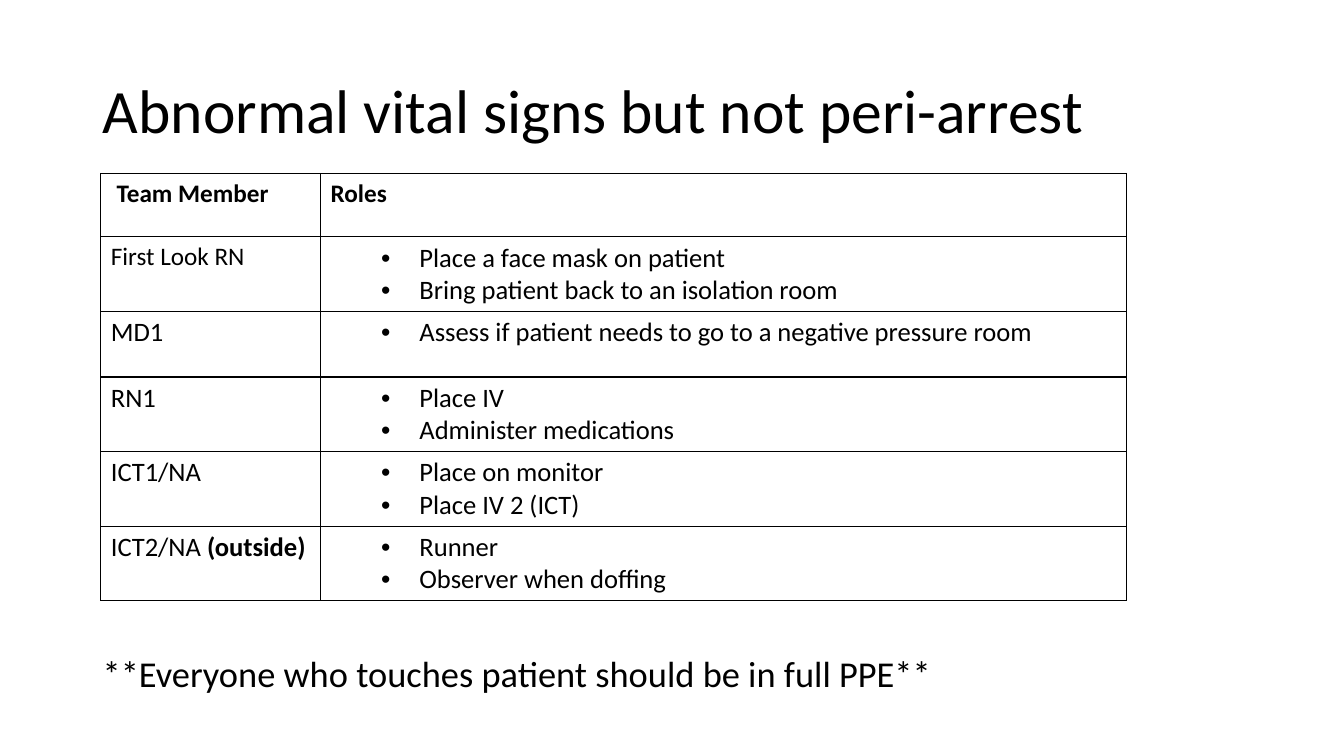
"""Build the slide of team roles for abnormal vital signs."""
from lxml.etree import SubElement
from pptx import Presentation
from pptx.dml.color import RGBColor
from pptx.enum.text import MSO_ANCHOR as Anchor
from pptx.oxml.ns import qn
from pptx.util import Inches, Pt

TITLE = "Abnormal vital signs but not peri-arrest"
HEADER = (" Team Member", "Roles")
ROLES = [
    ("First Look RN", "", ["Place a face mask on patient", "Bring patient back to an isolation room"]),
    ("MD1", "", ["Assess if patient needs to go to a negative pressure room"]),
    ("RN1", "", ["Place IV", "Administer medications"]),
    ("ICT1/NA", "", ["Place on monitor", "Place IV 2 (ICT)"]),
    ("ICT2/NA ", "(outside)", ["Runner", "Observer when doffing"]),
]
NOTE = "**Everyone who touches patient should be in full PPE**"

COLORS = {"text": "000000", "border": "000000"}
FONT = "Calibri"
COL_WIDTHS = (2.18, 7.99)
HEADER_HEIGHT = 0.63
ROW_HEIGHTS = {1: 0.65, 2: 0.74}


def add_run(p, text, size, bold=False):
    r = p.add_run()
    r.text = text
    for name, value in {"name": FONT, "size": Pt(size), "bold": bold}.items():
        setattr(r.font, name, value)
    r.font.color.rgb = RGBColor.from_string(COLORS["text"])


def add_bullet(p):
    p.level = 1
    pPr = p._p.get_or_add_pPr()
    pPr.set("marL", str(Inches(0.88)))
    pPr.set("indent", str(Inches(-0.38)))
    SubElement(pPr, qn("a:buFont"), typeface="Arial")
    SubElement(pPr, qn("a:buChar"), char="•")


def style_cell(cell):
    tcPr = cell._tc.get_or_add_tcPr()
    for side in ("lnL", "lnR", "lnT", "lnB"):
        ln = SubElement(tcPr, qn(f"a:{side}"), w=str(Pt(1)))
        fill = SubElement(ln, qn("a:solidFill"))
        SubElement(fill, qn("a:srgbClr"), val=COLORS["border"])
    cell.fill.background()


def add_roles_table(slide):
    heights = [HEADER_HEIGHT] + [ROW_HEIGHTS[len(tasks)] for _, _, tasks in ROLES]
    table = slide.shapes.add_table(
        len(heights), len(COL_WIDTHS), Inches(1), Inches(1.72),
        Inches(sum(COL_WIDTHS)), Inches(sum(heights))).table
    table.horz_banding = False
    for col, width in zip(table.columns, COL_WIDTHS):
        col.width = Inches(width)
    for row, height in zip(table.rows, heights):
        row.height = Inches(height)
    for cell in table.iter_cells():
        style_cell(cell)
    for c, label in enumerate(HEADER):
        add_run(table.cell(0, c).text_frame.paragraphs[0], label, 18, True)
    for i, (member, place, tasks) in enumerate(ROLES, 1):
        p = table.cell(i, 0).text_frame.paragraphs[0]
        add_run(p, member, 18 if i == 1 else 19)
        if place:
            add_run(p, place, 19, True)
        tf = table.cell(i, 1).text_frame
        for j, task in enumerate(tasks):
            p = tf.add_paragraph() if j else tf.paragraphs[0]
            add_bullet(p)
            add_run(p, task, 19)


def main():
    prs = Presentation()
    prs.slide_width, prs.slide_height = Inches(13.33), Inches(7.5)
    slide = prs.slides.add_slide(prs.slide_layouts[5])
    title = slide.shapes.title
    note = slide.shapes.add_textbox(0, 0, 0, 0)
    lines = [
        (title, TITLE, 44, 0.4, 1.45, Anchor.MIDDLE, 0),
        (note, NOTE, 26, 6.46, 0.81, Anchor.TOP, 10),
    ]
    for sp, text, size, top, height, anchor, before in lines:
        box = {"left": 0.92, "top": top, "width": 11.5, "height": height}
        for name, value in box.items():
            setattr(sp, name, Inches(value))
        tf = sp.text_frame
        tf.word_wrap, tf.vertical_anchor = True, anchor
        p = tf.paragraphs[0]
        p.line_spacing, p.space_before = 0.9, Pt(before)
        p._p.get_or_add_pPr().set("algn", "l")
        add_run(p, text, size)
    add_roles_table(slide)
    prs.save("out.pptx")


if __name__ == "__main__":
    main()
